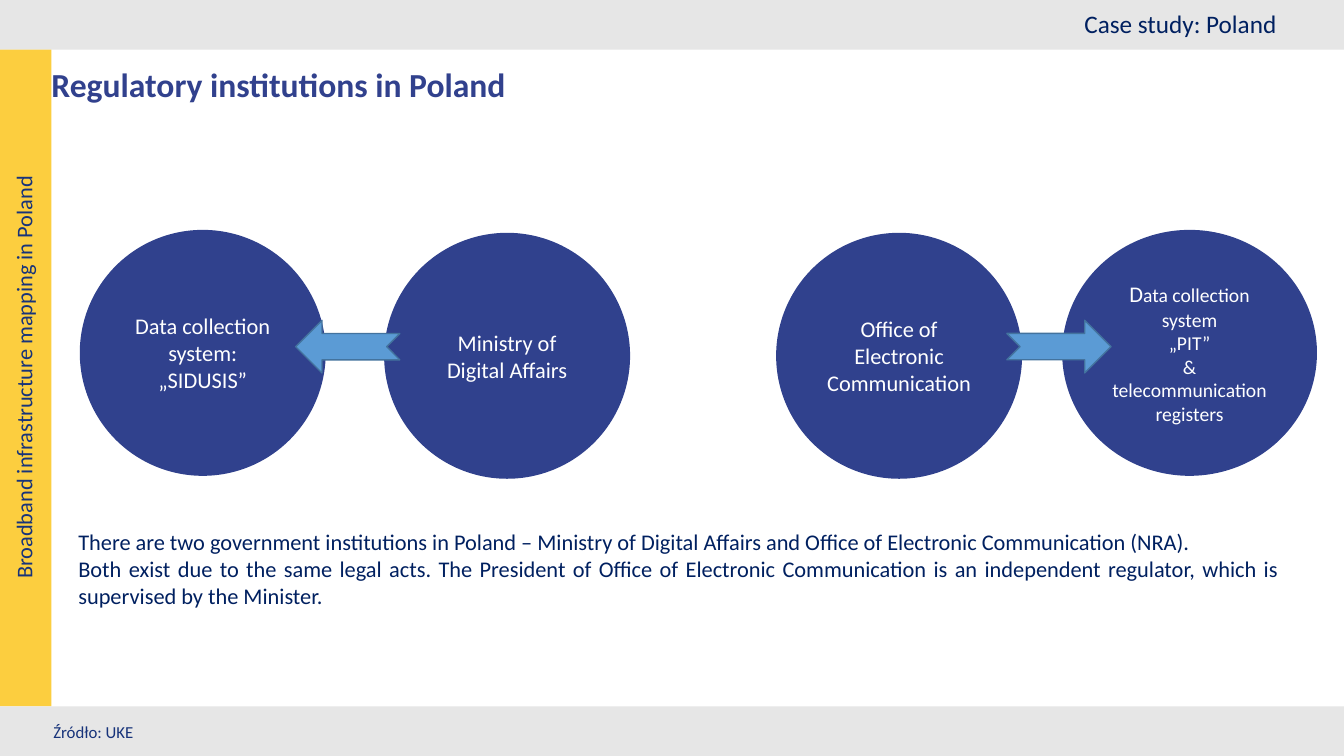
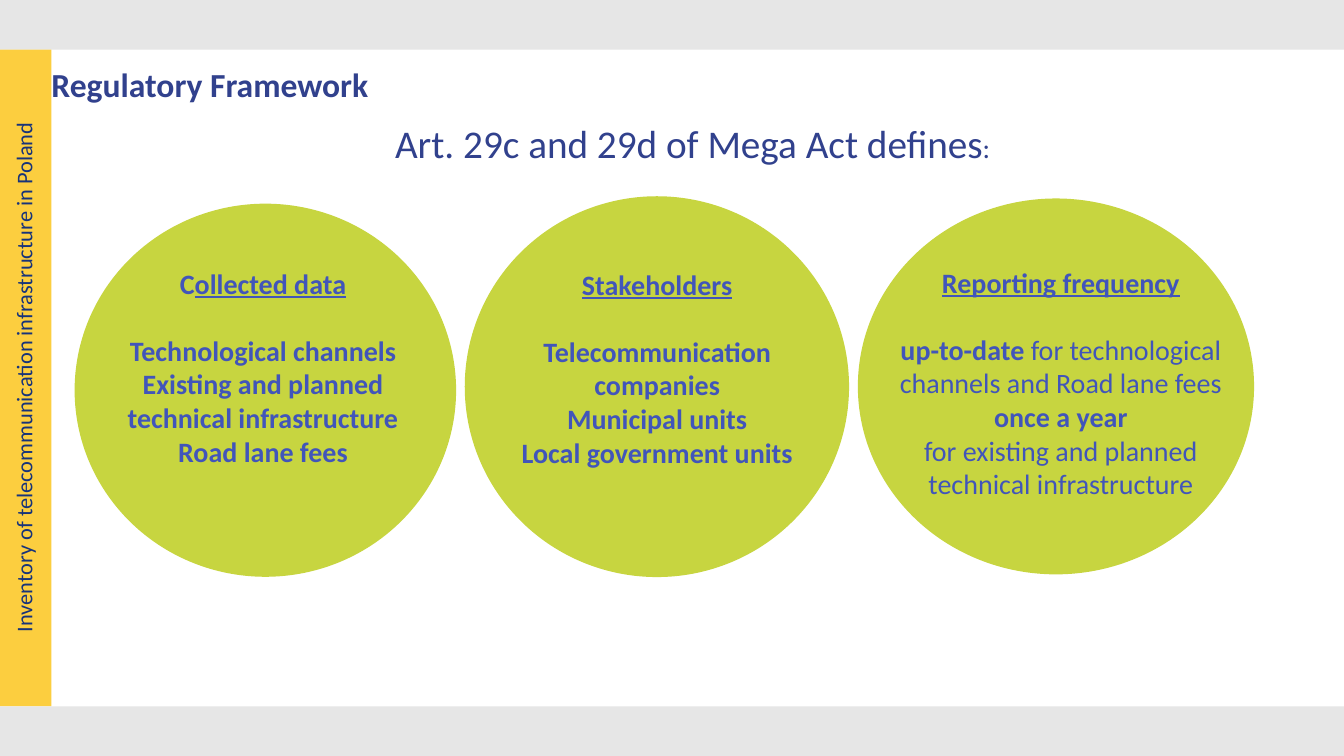
from dataclasses import dataclass

from pptx import Presentation
from pptx.dml.color import RGBColor
from pptx.enum.shapes import MSO_SHAPE
from pptx.enum.text import MSO_ANCHOR, PP_ALIGN
from pptx.util import Pt

RECT = MSO_SHAPE.RECTANGLE
OVAL = MSO_SHAPE.OVAL
ARROW = MSO_SHAPE.NOTCHED_RIGHT_ARROW
LEFT, CENTER, JUSTIFY = PP_ALIGN.LEFT, PP_ALIGN.CENTER, PP_ALIGN.JUSTIFY
MIDDLE = MSO_ANCHOR.MIDDLE


@dataclass(frozen=True)
class Theme:
    font: str = "Calibri"
    grey: str = "E6E6E6"
    yellow: str = "FCCE3F"
    navy: str = "30418D"
    lime: str = "C7D540"
    sky: str = "5B9BD5"
    edge: str = "43739E"
    white: str = "FFFFFF"
    title: str = "31418D"
    side: str = "17337A"
    body: str = "002060"
    list: str = "4155BA"
    note_size: int = 12
    small_size: int = 14
    text_size: int = 16
    tag_size: int = 18
    list_size: int = 20
    title_size: int = 24
    head_size: int = 28


THEME = Theme()
WIDTH, HEIGHT, BAND, SIDE = 960, 540, 35.5, 36.7


def paint(fill, color):
    fill.solid()
    fill.fore_color.rgb = RGBColor.from_string(color)


def write(frame, paras, size, color, align=LEFT, bold=False, gap=0, lead=None):
    frame.word_wrap = True
    for index, runs in enumerate(paras):
        para = frame.paragraphs[0] if index == 0 else frame.add_paragraph()
        para.alignment = align
        if lead:
            para.line_spacing = lead
        if index == 1 and gap:
            para.space_before = Pt(gap)
        font = para.font
        font.name, font.size, font.bold = THEME.font, Pt(size), bold
        font.color.rgb = RGBColor.from_string(color)
        for text, style in [(runs, {})] if isinstance(runs, str) else runs:
            run = para.add_run()
            run.text = text
            for key, value in style.items():
                setattr(run.font, key, value)


def add_text(slide, box, paras, size, color, turn=0, inset=None, **style):
    shape = slide.shapes.add_textbox(*map(Pt, box))
    shape.rotation = turn
    frame = shape.text_frame
    if inset:
        (frame.margin_left, frame.margin_top,
         frame.margin_right, frame.margin_bottom) = map(Pt, inset)
    write(frame, paras, size, color, **style)


def add_shape(slide, kind, box, color, edge=None, turn=0):
    shape = slide.shapes.add_shape(kind, *map(Pt, box))
    shape.shadow.inherit = False
    shape.rotation = turn
    paint(shape.fill, color)
    if edge:
        paint(shape.line.fill, edge)
        shape.line.width = Pt(1)
    else:
        shape.line.fill.background()
    return shape


def add_disc(slide, box, paras, size=THEME.text_size):
    frame = add_shape(slide, OVAL, box, THEME.navy).text_frame
    frame.vertical_anchor = MIDDLE
    write(frame, paras, size, THEME.white, align=CENTER)


def add_head(slide, box, runs, size, **style):
    add_text(slide, box, [runs], size, THEME.title,
             inset=(0, 14.4, 7.2, 14.4), lead=0.9, **style)


def add_frame(deck, title, label):
    slide = deck.slides.add_slide(deck.slide_layouts[6])
    for top in (0, HEIGHT - BAND):
        add_shape(slide, RECT, (0, top, WIDTH, BAND), THEME.grey)
    add_shape(slide, RECT, (0, BAND, SIDE, HEIGHT - 2 * BAND), THEME.yellow)
    add_text(slide, (-217.4, 256.3, 468.7, 26.6), [label], THEME.text_size,
             THEME.side, turn=270, align=CENTER)
    add_head(slide, (SIDE, 36, 756.7, 39.6), title, THEME.title_size, bold=True)
    return slide


def add_bodies(deck):
    slide = add_frame(deck, "Regulatory institutions in Poland",
                      "Broadband infrastructure mapping in Poland")
    add_text(slide, (767.5, 2.2, 172.8, 29.5), ["Case study: Poland"],
             THEME.tag_size, THEME.body)
    add_text(slide, (31, 512, 262, 21.6), ["Źródło: UKE"],
             THEME.note_size, THEME.side)
    add_text(slide, (48.9, 373.7, 872, 65.5), [
        "There are two government institutions in Poland – Ministry of Digital "
        "Affairs and Office of Electronic Communication (NRA).",
        "Both exist due to the same legal acts. The President of Office of "
        "Electronic Communication is an independent regulator, which is "
        "supervised by the Minister.",
    ], THEME.text_size, THEME.body, align=JUSTIFY)

    size, high, low = 175.7, 164.2, 166.3
    add_disc(slide, (57, high, size, size),
             ["Data collection system:", "„SIDUSIS”"])
    add_disc(slide, (274.4, low, size, size), ["Ministry of Digital Affairs"])
    add_disc(slide, (554.4, low, size, size),
             ["Office of Electronic Communication"])
    first = [("D", {"size": Pt(THEME.text_size)}), ("ata collection system", {})]
    add_disc(slide, (758.7, high, 182, size),
             [first, "„PIT”", "&", "telecommunication registers"],
             THEME.small_size)
    for left, turn in ((211.2, 180), (719.2, 0)):
        add_shape(slide, ARROW, (left, 228.8, 74.4, 37.6), THEME.sky,
                  THEME.edge, turn)


def add_rules(deck):
    slide = add_frame(deck, "Regulatory Framework",
                      "Inventory of telecommunication infrastructure in Poland")
    add_head(slide, (188, 74.9, 620.6, 41.8),
             [("Art. 29c and 29d of Mega Act defines", {}),
              (":", {"size": Pt(THEME.list_size)})],
             THEME.head_size, align=CENTER)
    under, plain = {"underline": True}, {"bold": False}
    topics = [
        ((53.3, 145.5, 272.5, 266.5), (57.6, 186.5, 260.6, 152.6),
         [[("C", {}), ("ollected data", under)],
          "Technological channels", "Existing and planned",
          "technical infrastructure", "Road lane fees"]),
        ((332, 140.2, 274.5, 272), (363.6, 187.2, 211.7, 152.6),
         [[("Stakeholders", under)],
          "Telecommunication", "companies", "Municipal units",
          "Local government units"]),
        ((612.8, 141.8, 283, 268.5), (625.7, 185.8, 264.2, 249.8),
         [[("Reporting frequency", under)],
          [("up-to-date ", {}),
           ("for technological channels and Road lane fees", plain)],
          "once a year", [("for existing and planned", plain)],
          [("technical infrastructure", plain)]]),
    ]
    for disc, box, paras in topics:
        add_shape(slide, OVAL, disc, THEME.lime)
        add_text(slide, box, paras, THEME.list_size, THEME.list,
                 align=CENTER, bold=True, gap=24)


def main():
    deck = Presentation()
    deck.slide_width, deck.slide_height = Pt(WIDTH), Pt(HEIGHT)
    add_bodies(deck)
    add_rules(deck)
    deck.save("out.pptx")


if __name__ == "__main__":
    main()
